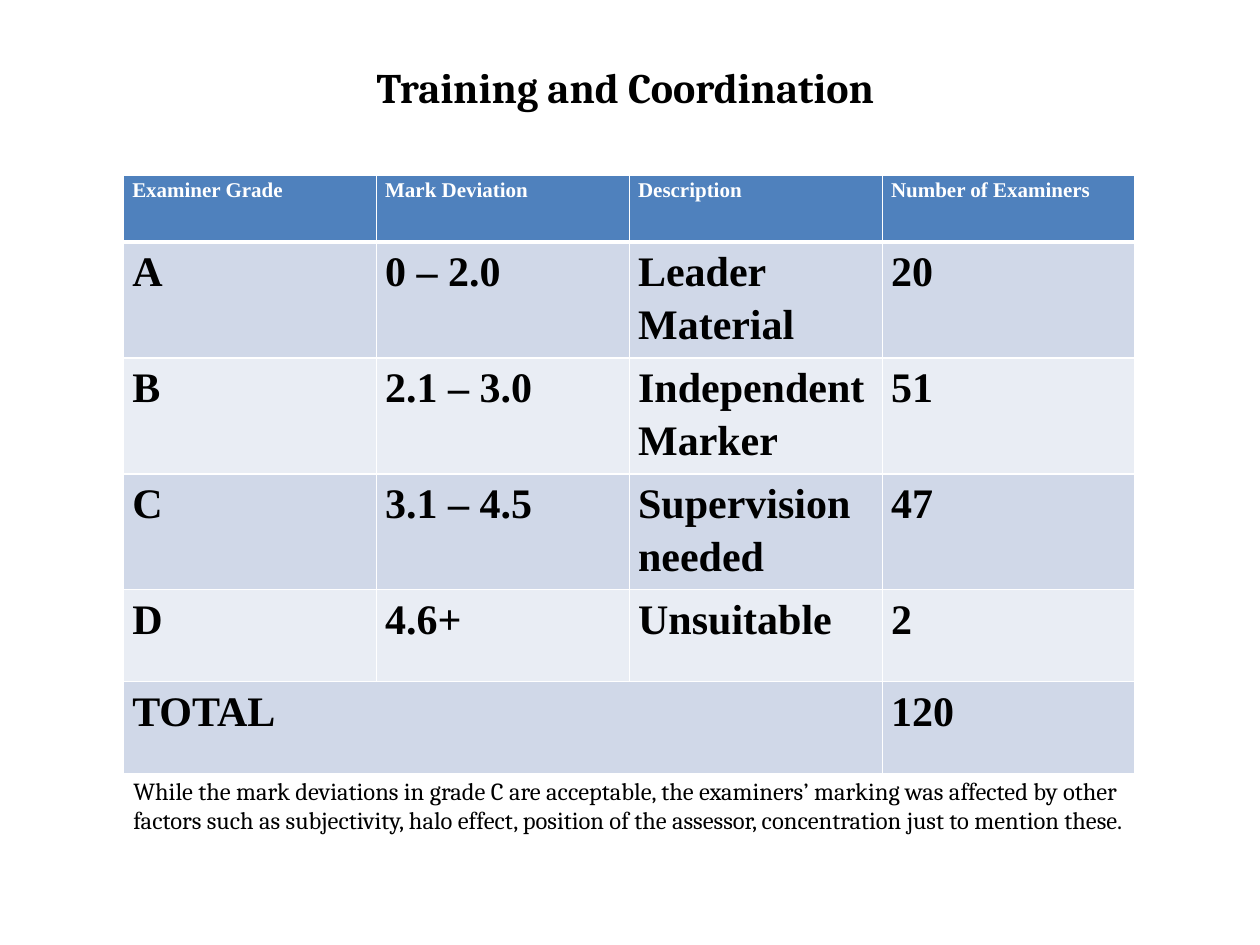
from lxml.etree import SubElement
from pptx import Presentation
from pptx.dml.color import RGBColor
from pptx.enum.text import MSO_ANCHOR, PP_ALIGN
from pptx.oxml.ns import qn
from pptx.util import Inches, Pt

BLACK = RGBColor(0x00, 0x00, 0x00)
WHITE = RGBColor(0xFF, 0xFF, 0xFF)
HEADER_BLUE = RGBColor(0x4F, 0x81, 0xBD)
BAND_DARK = RGBColor(0xD0, 0xD8, 0xE8)
BAND_LIGHT = RGBColor(0xE9, 0xED, 0xF4)

GRADES = [
    ["Examiner Grade", "Mark Deviation", "Description", "Number of Examiners"],
    ["A", "0 – 2.0", "Leader Material", "20"],
    ["B", "2.1 – 3.0", "Independent Marker", "51"],
    ["C", "3.1 – 4.5", "Supervision needed", "47"],
    ["D", "4.6+", "Unsuitable", "2"],
    ["TOTAL", "", "", "120"],
]
NOTE = (
    "While the mark deviations in grade C are acceptable, the examiners’ marking "
    "was affected by other factors such as subjectivity, halo effect, position of "
    "the assessor, concentration just to mention these."
)


def style_font(para, name, size, color, bold):
    """Set the font of a whole paragraph."""
    para.font.name = name
    para.font.size = Pt(size)
    para.font.color.rgb = color
    para.font.bold = bold


def add_text(page, box, text, size, bold=False, align=PP_ALIGN.LEFT, anchor=MSO_ANCHOR.TOP):
    """Place one wrapped Cambria paragraph in the box."""
    frame = page.shapes.add_textbox(*map(Inches, box)).text_frame
    frame.word_wrap = True
    frame.vertical_anchor = anchor
    para = frame.paragraphs[0]
    para.text = text
    para.alignment = align
    style_font(para, "Cambria", size, BLACK, bold)


def add_borders(cell, top, bottom):
    """Draw white borders, with top and bottom widths in points."""
    properties = cell._tc.get_or_add_tcPr()
    for side, width in (("L", 1), ("R", 1), ("T", top), ("B", bottom)):
        line = SubElement(properties, qn(f"a:ln{side}"), w=str(Pt(width)))
        fill = SubElement(line, qn("a:solidFill"))
        SubElement(fill, qn("a:srgbClr"), val=str(WHITE))


def style_cell(cell, text, row):
    """Fill, border and label a cell according to its row."""
    header = row == 0
    add_borders(cell, 3 if row == 1 else 1, 3 if header else 1)
    cell.fill.solid()
    cell.fill.fore_color.rgb = HEADER_BLUE if header else BAND_DARK if row % 2 else BAND_LIGHT
    cell.margin_left = cell.margin_right = Inches(0.07)
    cell.margin_top = cell.margin_bottom = 0
    para = cell.text_frame.paragraphs[0]
    para.text = text
    para.line_spacing = 1.15
    para.space_after = Pt(10)
    style_font(para, "Times New Roman", 12 if header else 24, WHITE if header else BLACK, True)


def add_grade_table(page, box):
    """Place the examiner grade table in the box."""
    left, top, width, height = map(Inches, box)
    frame = page.shapes.add_table(len(GRADES), len(GRADES[0]), left, top, width, height)
    table = frame.table
    for index, row in enumerate(table.rows):
        row.height = Inches(0.73 if index else 0.53)
    frame.height = height
    for row, texts in enumerate(GRADES):
        for column, text in enumerate(texts):
            style_cell(table.cell(row, column), text, row)
    total = len(GRADES) - 1
    table.cell(total, 0).merge(table.cell(total, 2))


def main():
    """Build and save the slide."""
    deck = Presentation()
    deck.slide_width, deck.slide_height = Inches(10), Inches(7.5)
    page = deck.slides.add_slide(deck.slide_layouts[6])
    add_text(page, (0.5, 0.3, 9, 0.77), "Training and Coordination ", 24,
             True, PP_ALIGN.CENTER, MSO_ANCHOR.MIDDLE)
    add_grade_table(page, (0.98, 1.39, 8.03, 4.75))
    add_text(page, (0.96, 6.11, 8.35, 0.81), NOTE, 14)
    deck.save("out.pptx")


if __name__ == "__main__":
    main()
